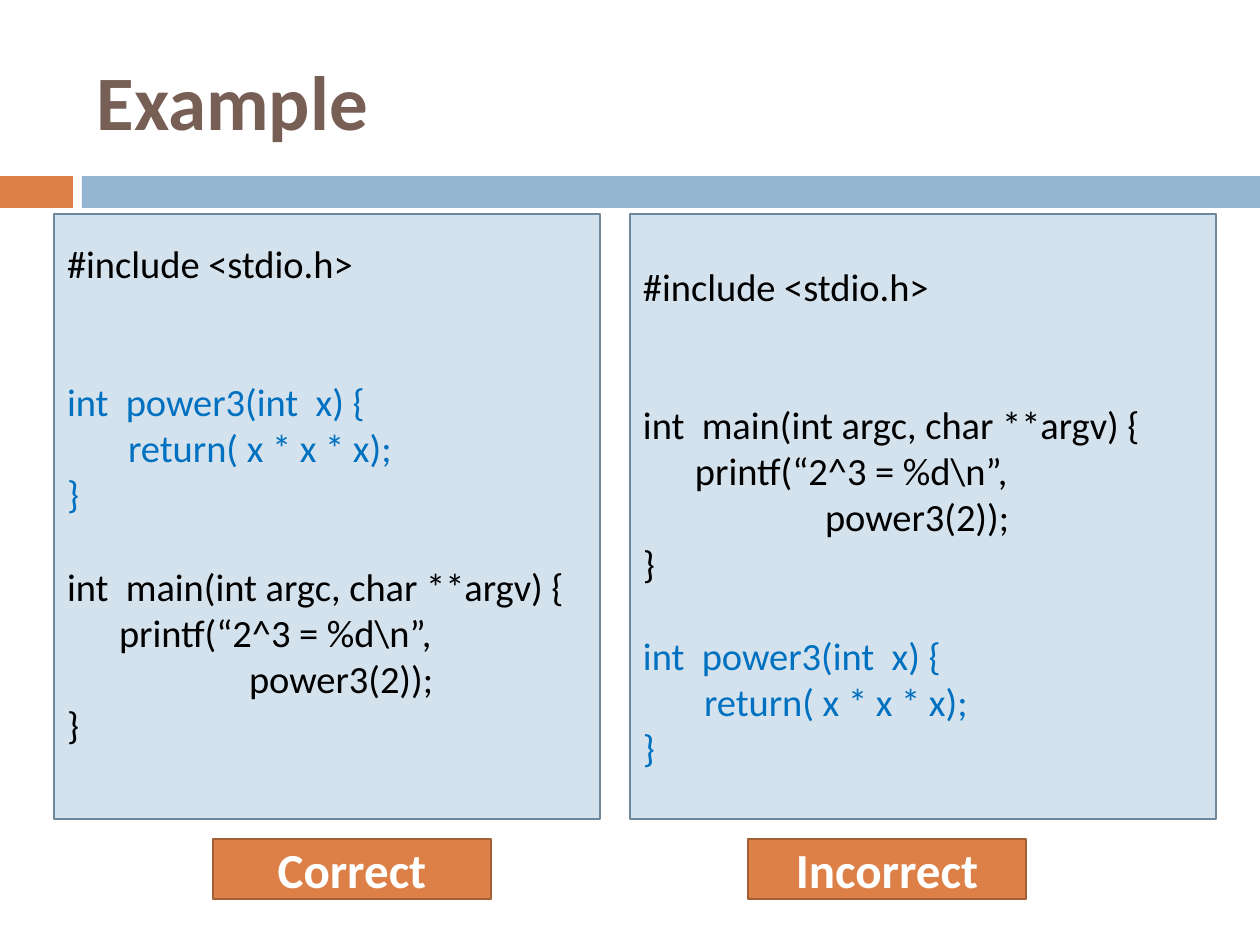
from dataclasses import dataclass

from pptx import Presentation
from pptx.dml.color import RGBColor
from pptx.enum.shapes import MSO_SHAPE
from pptx.enum.text import MSO_ANCHOR, PP_ALIGN
from pptx.util import Pt

EMU_PER_PX = 914400 / 126
FONT = "Calibri"
LINE_HEIGHT = 46
INSET = 13
COLORS = {
    "title": "775F55", "orange": "DD8047", "blue": "94B6D2",
    "panel": "D4E2ED", "panel_line": "6D879B", "label_line": "A35F35",
    "code": "000000", "function": "0070C0", "white": "FFFFFF",
}


@dataclass(frozen=True)
class Box:
    left: int
    top: int
    width: int
    height: int


@dataclass(frozen=True)
class CodeLine:
    text: str
    color: str = "code"
    indent: int = 0
    blank_before: int = 0


@dataclass(frozen=True)
class Panel:
    box: Box
    blocks: list
    label: str
    label_left: int
    blank_after: int = 0


# Code blocks shared by both panels
INCLUDE = [CodeLine("#include <stdio.h>")]
POWER = [
    CodeLine("int  power3(int  x) {", "function"),
    CodeLine("return( x * x * x);", "function", indent=61),
    CodeLine("}", "function"),
]
MAIN = [
    CodeLine("int  main(int argc, char **argv) {"),
    CodeLine("printf(“2^3 = %d\\n”,", indent=52),
    CodeLine("power3(2));", indent=182),
    CodeLine("}"),
]
BLANKS_BEFORE_BLOCK = (0, 2, 1)

BARS = [(Box(0, 176, 73, 32), "orange"), (Box(82, 176, 1178, 32), "blue")]
PANELS = [
    Panel(Box(54, 214, 546, 605), [INCLUDE, POWER, MAIN], "Correct", 213, blank_after=1),
    Panel(Box(630, 214, 586, 605), [INCLUDE, MAIN, POWER], "Incorrect", 748),
]


def px(value: int) -> int:
    return round(value * EMU_PER_PX)


def rgb(name: str) -> RGBColor:
    return RGBColor.from_string(COLORS[name])


def place(shape, box: Box) -> None:
    shape.left, shape.top = px(box.left), px(box.top)
    shape.width, shape.height = px(box.width), px(box.height)


def format_runs(paragraph, size: int, color: str, bold: bool = False) -> None:
    for run in paragraph.runs:
        run.font.name = FONT
        run.font.size = Pt(size)
        run.font.bold = bold
        run.font.color.rgb = rgb(color)


def add_rectangle(slide, box: Box, fill: str, line: str = ""):
    shape = slide.shapes.add_shape(MSO_SHAPE.RECTANGLE, 0, 0, 0, 0)
    place(shape, box)
    shape.shadow.inherit = False
    shape.fill.solid()
    shape.fill.fore_color.rgb = rgb(fill)
    if line:
        shape.line.color.rgb = rgb(line)
        shape.line.width = Pt(1.5)
    else:
        shape.line.fill.background()
    return shape


def add_code(slide, panel: Panel) -> None:
    shape = add_rectangle(slide, panel.box, "panel", "panel_line")
    text_frame = shape.text_frame
    text_frame.word_wrap = True
    text_frame.vertical_anchor = MSO_ANCHOR.MIDDLE
    text_frame.margin_left = text_frame.margin_right = px(INSET)
    text_frame.margin_bottom = px(6 + panel.blank_after * LINE_HEIGHT)
    lines = [line for block in panel.blocks for line in block]
    text_frame.text = "\n".join(line.text for line in lines)
    for paragraph, line in zip(text_frame.paragraphs, lines):
        paragraph.alignment = PP_ALIGN.LEFT
        paragraph._p.get_or_add_pPr().set("marL", str(px(line.indent)))
        format_runs(paragraph, 22, line.color)

    # Gaps between the code blocks
    start = 0
    for block, blanks in zip(panel.blocks, BLANKS_BEFORE_BLOCK):
        text_frame.paragraphs[start].space_before = px(blanks * LINE_HEIGHT)
        start += len(block)


def add_label(slide, panel: Panel) -> None:
    box = Box(panel.label_left, 839, 278, 60)
    shape = add_rectangle(slide, box, "orange", "label_line")
    text_frame = shape.text_frame
    text_frame.vertical_anchor = MSO_ANCHOR.MIDDLE
    text_frame.text = panel.label
    paragraph = text_frame.paragraphs[0]
    paragraph.alignment = PP_ALIGN.CENTER
    format_runs(paragraph, 28, "white", bold=True)


def add_title(slide, text: str) -> None:
    title = slide.shapes.title
    place(title, Box(84, 32, 1124, 136))
    title.text_frame.text = text
    title.text_frame.vertical_anchor = MSO_ANCHOR.MIDDLE
    paragraph = title.text_frame.paragraphs[0]
    paragraph.alignment = PP_ALIGN.LEFT
    format_runs(paragraph, 44, "title", bold=True)


def main() -> None:
    presentation = Presentation()
    presentation.slide_width, presentation.slide_height = px(1260), px(945)
    slide = presentation.slides.add_slide(presentation.slide_layouts[5])

    # Header
    add_title(slide, "Example")
    for box, color in BARS:
        add_rectangle(slide, box, color)

    # Code panels with their verdicts
    for panel in PANELS:
        add_code(slide, panel)
        add_label(slide, panel)

    presentation.save("out.pptx")


if __name__ == "__main__":
    main()
